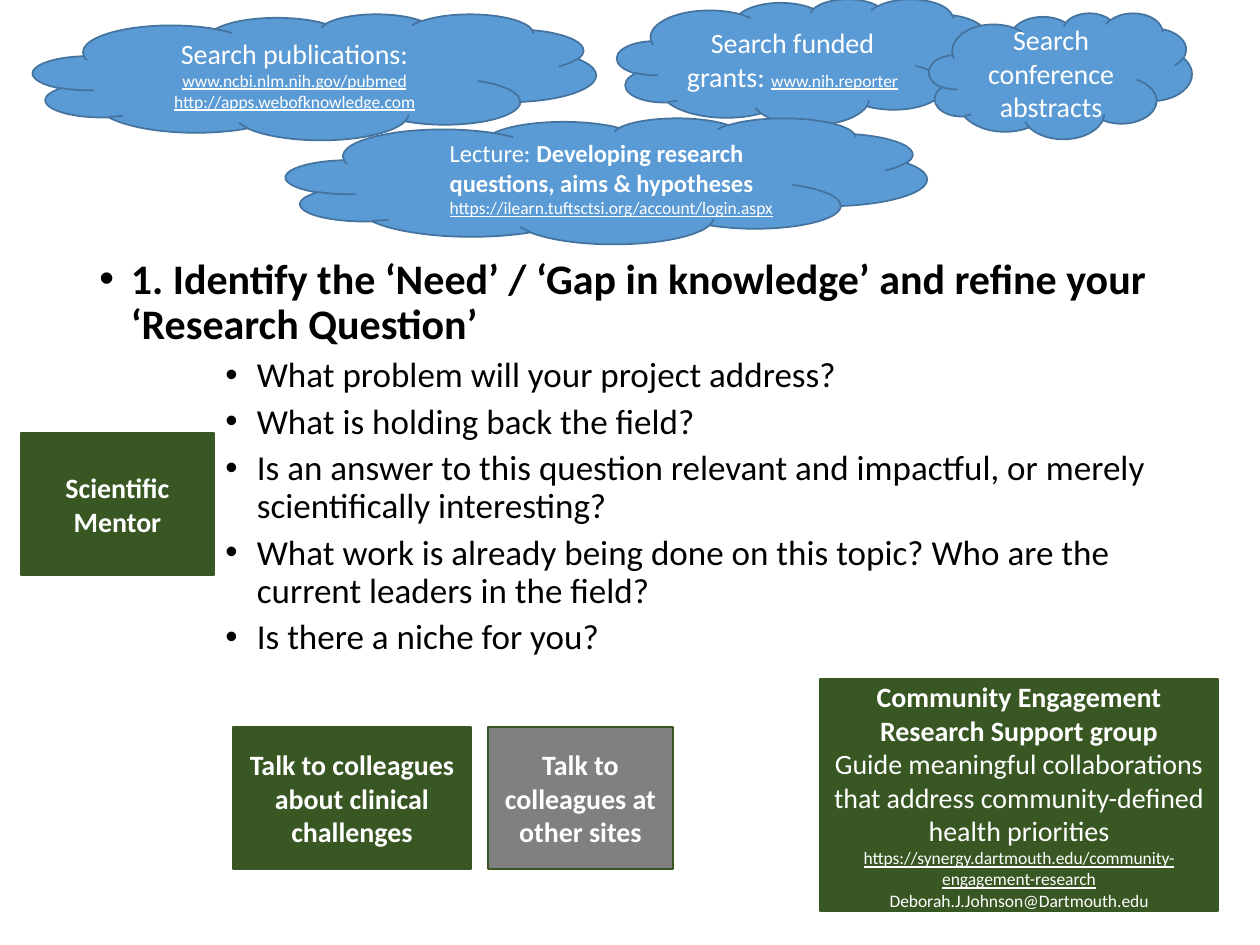
from pptx import Presentation
from pptx.dml.color import RGBColor
from pptx.enum.shapes import MSO_SHAPE
from pptx.enum.text import MSO_ANCHOR, PP_ALIGN
from pptx.util import Emu, Pt
from lxml.etree import SubElement
from pptx.oxml.ns import qn

FONT = "Calibri"
COLORS = {
    "cloud": "5B9BD5",
    "cloud_line": "43739E",
    "green": "385723",
    "gray": "808080",
    "white": "FFFFFF",
    "black": "000000",
}


def px(n):
    """Turn pixels at 126 to the inch into EMU."""
    return Emu(round(n * 914400 / 126))


def rgb(name):
    """Look up a named colour."""
    return RGBColor.from_string(COLORS[name])


def style(font, size, color, bold=False, underline=False):
    """Set the look of a font."""
    font.name = FONT
    font.size = Pt(size)
    font.bold = bold
    font.underline = underline
    font.color.rgb = rgb(color)


def heading(text, size=16):
    """Describe a bold run."""
    return text, size, True, False


def plain(text, size=16):
    """Describe a regular run."""
    return text, size, False, False


def link(text):
    """Describe a small underlined run."""
    return text, 10, False, True


def add_note(s, box, paragraphs, kind, fill, line, indent=0):
    """Draw a filled shape holding paragraphs of styled runs."""
    sp = s.shapes.add_shape(kind, *map(px, box))
    sp.shadow.inherit = False
    sp.fill.solid()
    sp.fill.fore_color.rgb = rgb(fill)
    sp.line.color.rgb = rgb(line)
    sp.line.width = Pt(1)
    tf = sp.text_frame
    tf.word_wrap = True
    tf.vertical_anchor = MSO_ANCHOR.MIDDLE
    for i, runs in enumerate(paragraphs):
        p = tf.add_paragraph() if i else tf.paragraphs[0]
        p.alignment = PP_ALIGN.LEFT if indent else PP_ALIGN.CENTER
        if indent:
            p.level = 1
            p._p.get_or_add_pPr().set("marL", str(px(indent)))
        for text, size, bold, underline in runs:
            r = p.add_run()
            r.text = text
            style(r.font, size, "white", bold, underline)


def add_cloud(s, box, paragraphs, indent=0):
    """Draw a blue cloud naming a resource."""
    add_note(s, box, paragraphs, MSO_SHAPE.CLOUD, "cloud", "cloud_line", indent)


def add_box(s, box, paragraphs, fill="green"):
    """Draw a rectangle naming people to talk to."""
    add_note(s, box, paragraphs, MSO_SHAPE.RECTANGLE, fill, "green")


def add_bullet(p, margin):
    """Give a paragraph a hanging round bullet."""
    pPr = p._p.get_or_add_pPr()
    pPr.set("marL", str(px(margin)))
    pPr.set("indent", str(-px(31.5)))
    SubElement(pPr, qn("a:buFont"), typeface="Arial")
    SubElement(pPr, qn("a:buChar"), char="•")


def add_questions(s, box, title, questions):
    """Write the step title and its bulleted questions."""
    tf = s.shapes.add_textbox(*map(px, box)).text_frame
    tf.word_wrap = True
    for i, text in enumerate([title, *questions]):
        p = tf.add_paragraph() if i else tf.paragraphs[0]
        p.text = text
        p.level = 2 if i else 0
        add_bullet(p, 157.5 if i else 31.5)
        p.line_spacing = 0.9
        p.space_before = Pt(5 if i else 0)
        style(p.runs[0].font, 20 if i else 24, "black", bold=not i)


def main():
    """Build the slide and save it."""
    prs = Presentation()
    prs.slide_width, prs.slide_height = px(1260), px(945)
    s = prs.slides.add_slide(prs.slide_layouts[6])
    add_questions(
        s, (87, 252, 1086, 600),
        "1. Identify the ‘Need’ / ‘Gap in knowledge’ and refine your ‘Research Question’",
        [
            "What problem will your project address?",
            "What is holding back the field?",
            "Is an answer to this question relevant and impactful, or merely scientifically interesting?",
            "What work is already being done on this topic? Who are the current leaders in the field?",
            "Is there a niche for you?",
        ],
    )
    add_cloud(s, (617, -1, 378, 126),
              [[plain("Search funded grants: "), link("www.nih.reporter")]])
    add_cloud(s, (929, 13, 263, 126), [[plain("Search conference abstracts")]])
    add_cloud(s, (33, 14, 563, 126), [
        [plain("Search publications: "), link("www.ncbi.nlm.nih.gov/pubmed")],
        [link("http://apps.webofknowledge.com")],
    ])
    add_box(s, (820, 679, 398, 232), [
        [heading("Community Engagement Research Support group")],
        [plain("Guide meaningful collaborations that address community-defined health priorities")],
        [link("https://synergy.dartmouth.edu/community-engagement-research")],
        [plain("Deborah.J.Johnson@Dartmouth.edu", 10)],
    ])
    add_box(s, (233, 727, 238, 142),
            [[heading("Talk to colleagues about clinical challenges")]])
    add_box(s, (488, 727, 185, 142),
            [[heading("Talk to colleagues at other sites")]], "gray")
    add_cloud(s, (286, 118, 641, 126), [[
        plain("Lecture: ", 14),
        heading("Developing research questions, aims & hypotheses ", 14),
        link("https://ilearn.tuftsctsi.org/account/login.aspx"),
    ]], indent=63)
    add_box(s, (21, 433, 193, 142), [[heading("Scientific Mentor")]])
    prs.save("out.pptx")


if __name__ == "__main__":
    main()
